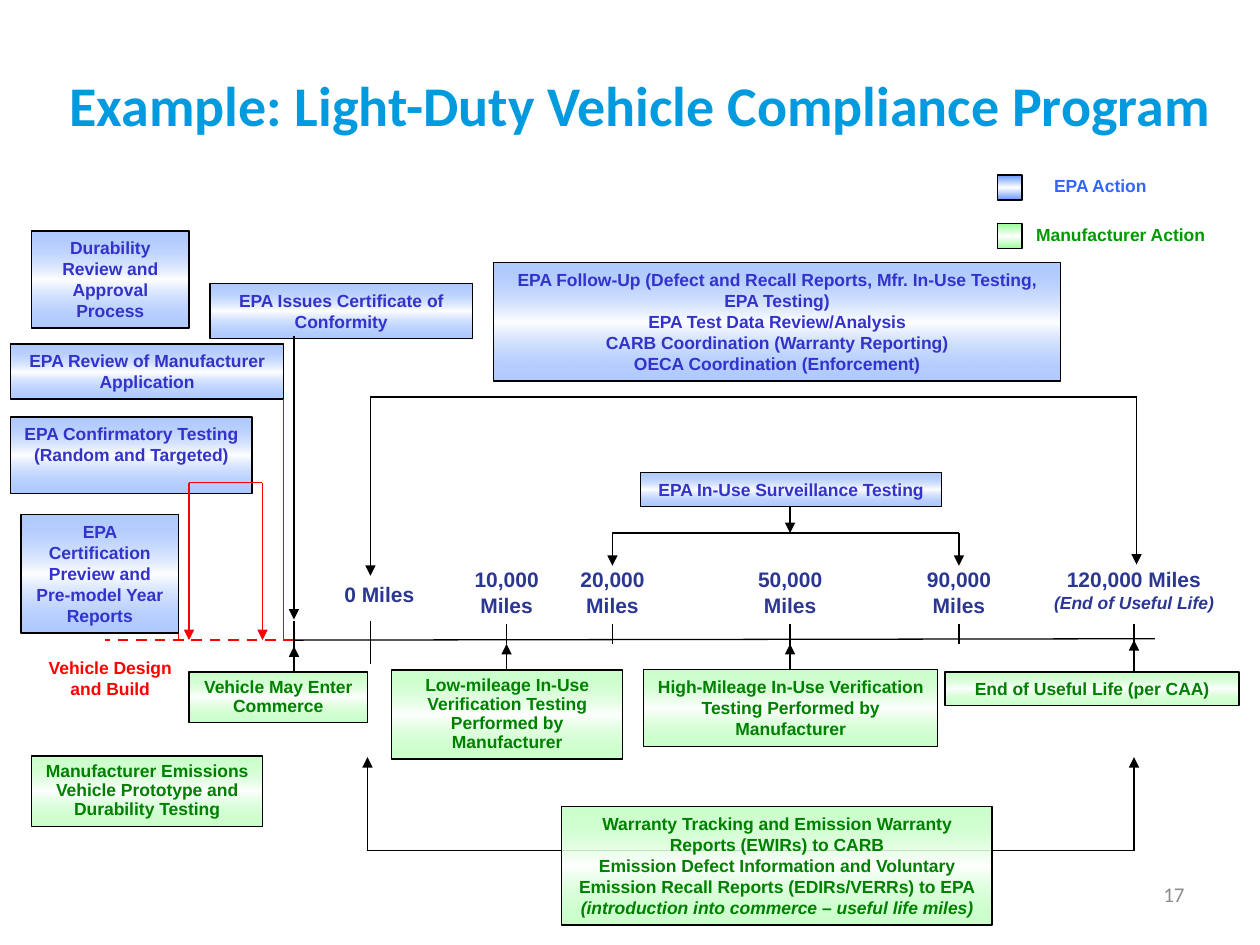
from lxml.etree import SubElement
from pptx import Presentation
from pptx.dml.color import RGBColor
from pptx.enum.dml import MSO_LINE
from pptx.enum.shapes import MSO_CONNECTOR, MSO_SHAPE
from pptx.enum.text import MSO_ANCHOR, PP_ALIGN
from pptx.oxml.ns import qn
from pptx.util import Pt

BLACK, RED, NAVY = "000000", "FF0000", "2B3791"
EPA = {"tint": "6699FF", "alpha": 51, "color": "3333CC"}
MAKER = {"tint": "99FF99", "alpha": 49, "color": "008000"}


def paint(code):
    return RGBColor.from_string(code)


def write(shape, text, size=10, color=BLACK, font="Arial", bold=True,
          align=PP_ALIGN.CENTER, anchor=MSO_ANCHOR.TOP, space=None, tail=None):
    frame = shape.text_frame
    frame.word_wrap = True
    frame.vertical_anchor = anchor
    lines = text.split("\n")
    rows = [(line, size, False) for line in lines]
    if tail:
        rows.append((tail, 10, True))
    for i, (line, high, slant) in enumerate(rows):
        para = frame.paragraphs[0] if i == 0 else frame.add_paragraph()
        para.alignment = align
        if space:
            para.line_spacing = space
        run = para.add_run()
        run.text = line
        run.font.name = font
        run.font.size = Pt(high)
        run.font.bold = bold
        run.font.italic = slant
        run.font.color.rgb = paint(color)


def label(slide, place, text, **look):
    write(slide.shapes.add_textbox(*map(Pt, place)), text, **look)


def panel(slide, place, tint, alpha=100):
    shape = slide.shapes.add_shape(MSO_SHAPE.RECTANGLE, *map(Pt, place))
    shape.shadow.inherit = False
    shape.line.color.rgb = paint(BLACK)
    shape.line.width = Pt(0.75)
    shape.fill.gradient()
    shape.fill.gradient_angle = 90
    stops = shape._element.spPr.find(qn("a:gradFill")).find(qn("a:gsLst"))
    for stop in list(stops):
        stops.remove(stop)
    for pos, code, clear in ((0, tint, alpha), (50, "FFFFFF", 100), (100, tint, alpha)):
        stop = SubElement(stops, qn("a:gs"), pos=str(pos * 1000))
        hue = SubElement(stop, qn("a:srgbClr"), val=code)
        if clear < 100:
            SubElement(hue, qn("a:alpha"), val=str(clear * 1000))
    return shape


def box(slide, place, text, kind, **look):
    shape = panel(slide, place, kind["tint"], kind["alpha"])
    write(shape, text, color=kind["color"], **look)


def line(slide, x1, y1, x2, y2, color=BLACK, width=0.75, arrow=False, dash=False):
    link = slide.shapes.add_connector(
        MSO_CONNECTOR.STRAIGHT, Pt(x1), Pt(y1), Pt(x2), Pt(y2))
    link.line.color.rgb = paint(color)
    link.line.width = Pt(width)
    if dash:
        link.line.dash_style = MSO_LINE.DASH
    if arrow:
        SubElement(link.line._get_or_add_ln(), qn("a:tailEnd"), type="triangle")
    SubElement(link._element.spPr, qn("a:effectLst"))


def bracket(slide, left, right, base, lend, rend, color=BLACK):
    line(slide, left, base, right, base, color)
    line(slide, left, base, left, lend, color, arrow=True)
    line(slide, right, base, right, rend, color, arrow=True)


def axis(slide):
    line(slide, 168, 365.8, 660, 365)
    line(slide, 168, 365.8, 60, 365.8, RED, 1.5, dash=True)
    for x, top, end in ((168, 355, 379.4), (211.7, 355, 379.4),
                        (289.5, 356.4, 368), (350, 356.4, 368),
                        (451.5, 356.4, 380), (548, 356.4, 368), (648, 356.4, 368)):
        line(slide, x, top, x, end)
    for x, low, tip in ((168, 384, 369.4), (289.5, 383, 368),
                        (451.5, 383, 368), (648, 384, 365.8)):
        line(slide, x, low, x, tip, arrow=True)
    label(slide, (181.5, 329, 70.5, 21.6), "0 Miles", size=12, color=NAVY)
    for x, miles in ((289.5, "10,000"), (350, "20,000"), (451.5, "50,000"), (548, "90,000")):
        label(slide, (x - 30, 320.4, 60, 36), miles + " Miles", size=12, color=NAVY)
    label(slide, (594, 320.4, 108, 34), "120,000 Miles", size=12, color=NAVY,
          tail="(End of Useful Life)")
    label(slide, (12, 372, 102, 32), "Vehicle Design and Build", color=RED)


def legend(slide):
    for y, kind, text, wide, color in (
            (100, EPA, "EPA Action", 89.5, "3366FF"),
            (127.8, MAKER, "Manufacturer Action", 112.5, "009900")):
        panel(slide, (570, y, 14, 14.4), kind["tint"])
        label(slide, (584, y - 3.6, wide, 19.2), text, color=color)


def steps(slide):
    for place, text in (
            ((18, 132, 90, 55.5), "Durability Review and Approval Process"),
            ((120, 162, 150, 31.5), "EPA Issues Certificate of Conformity"),
            ((6, 196.6, 156, 31.5), "EPA Review of Manufacturer Application"),
            ((6, 238.3, 138, 43.7), "EPA Confirmatory Testing (Random and Targeted)"),
            ((12, 294, 90, 67.8), "EPA Certification Preview and Pre-model Year Reports"),
            ((366, 270, 172, 19.4), "EPA In-Use Surveillance Testing"),
            ((282, 150, 324, 67.8),
             "EPA Follow-Up (Defect and Recall Reports, Mfr. In-Use Testing, EPA Testing)\n"
             "EPA Test Data Review/Analysis\n"
             "CARB Coordination (Warranty Reporting)\n"
             "OECA Coordination (Enforcement)")):
        box(slide, place, text, EPA)
    for place, text, space in (
            ((108, 384, 102, 28.8), "Vehicle May Enter Commerce", 0.9),
            ((223.8, 382.8, 132, 51), "Low-mileage In-Use Verification Testing "
             "Performed by Manufacturer", 0.9),
            ((367.8, 382.8, 168, 43.7), "High-Mileage In-Use Verification Testing "
             "Performed by Manufacturer", None),
            ((540, 384, 168, 19.4), "End of Useful Life (per CAA)", None),
            ((18, 432, 132, 40.3), "Manufacturer Emissions Vehicle Prototype and "
             "Durability Testing", 0.9)):
        box(slide, place, text, MAKER, space=space)
    box(slide, (321, 460.8, 246, 67.8),
        "Warranty Tracking and Emission Warranty Reports (EWIRs) to CARB\n"
        "Emission Defect Information and Voluntary Emission Recall Reports "
        "(EDIRs/VERRs) to EPA", MAKER,
        tail="(introduction into commerce – useful life miles)")


def main():
    deck = Presentation()
    deck.slide_width, deck.slide_height = Pt(720), Pt(540)
    slide = deck.slides.add_slide(deck.slide_layouts[6])
    label(slide, (30, 18, 672, 90), "Example: Light-Duty Vehicle Compliance Program",
          size=32, color="009BDE", font="Calibri", anchor=MSO_ANCHOR.MIDDLE, space=0.8)
    label(slide, (516, 492, 168, 37.5), "17", size=12, color="8C8C8C", font="Calibri",
          bold=False, align=PP_ALIGN.RIGHT, anchor=MSO_ANCHOR.MIDDLE)
    axis(slide)
    legend(slide)
    bracket(slide, 350, 548, 304.6, 323.3, 323.3)
    bracket(slide, 211.7, 649.5, 226.8, 329, 322.6)
    bracket(slide, 210, 648, 486, 432.7, 432.7)
    line(slide, 451.5, 289.4, 451.5, 304.6, arrow=True)
    line(slide, 102, 365.8, 102, 336, RED)
    steps(slide)
    line(slide, 162, 228, 162, 365.8, RED)
    line(slide, 168, 192, 168, 354, arrow=True)
    bracket(slide, 108, 150, 275.8, 365.8, 365.8, RED)
    deck.save("out.pptx")


if __name__ == "__main__":
    main()
